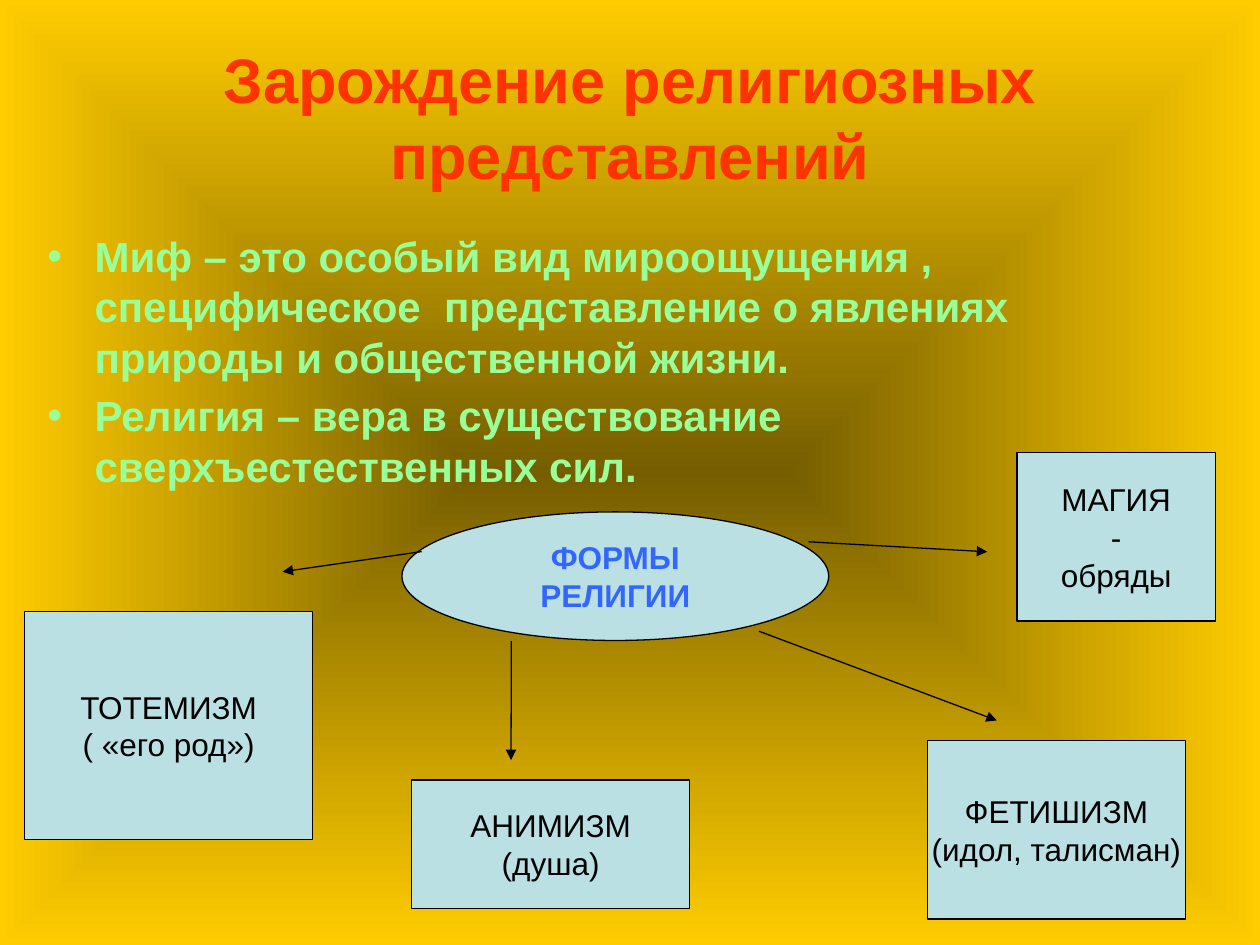
from dataclasses import dataclass

from pptx import Presentation
from pptx.dml.color import RGBColor
from pptx.enum.shapes import MSO_CONNECTOR, MSO_SHAPE
from pptx.enum.text import MSO_ANCHOR as Anchor, MSO_AUTO_SIZE as AutoSize, PP_ALIGN as Align
from pptx.oxml import parse_xml
from pptx.oxml.ns import nsdecls
from pptx.slide import Slide
from pptx.text.text import TextFrame
from pptx.util import Pt

COLORS = {
    "center": "765E00",
    "edge": "FFCC00",
    "title": "FF3300",
    "body": "99FF99",
    "node": "BBE0E3",
    "forms": "3366FF",
    "ink": "000000",
}


@dataclass
class Node:
    left: float
    top: float
    width: float
    height: float
    lines: list[str]
    preset: MSO_SHAPE = MSO_SHAPE.RECTANGLE
    color: str = "ink"
    bold: bool = False


@dataclass
class Arrow:
    x1: float
    y1: float
    x2: float
    y2: float


TITLE = ["Зарождение религиозных представлений"]
DEFINITIONS = [
    "Миф – это особый вид мироощущения , специфическое  представление о явлениях природы и общественной жизни.",
    "Религия – вера в существование сверхъестественных сил.",
]
NODES = [
    Node(229.7, 292.5, 243.9, 73.5, ["ФОРМЫ", "РЕЛИГИИ"], MSO_SHAPE.OVAL, "forms", True),
    Node(14.2, 349.3, 164.4, 130.4, ["ТОТЕМИЗМ", "( «его род»)"]),
    Node(235.3, 445.7, 158.7, 73.6, ["АНИМИЗМ", "(душа)"]),
    Node(530, 423.2, 147.4, 102, ["ФЕТИШИЗМ", "(идол, талисман)"]),
    Node(581.2, 258.5, 113.3, 96.5, ["МАГИЯ", "-", "обряды"]),
]
ARROWS = [
    Arrow(241, 315.2, 161.5, 326.7),
    Arrow(292.2, 366.3, 292, 434.4),
    Arrow(433.7, 360.7, 569.6, 411.7),
    Arrow(462, 309.6, 564.1, 315.3),
]


def rgb(name: str) -> RGBColor:
    return RGBColor.from_string(COLORS[name])


def write(frame: TextFrame, lines: list[str], size: float, color: str,
          bold: bool, align: Align) -> None:
    for index, line in enumerate(lines):
        paragraph = frame.paragraphs[0] if index == 0 else frame.add_paragraph()
        paragraph.alignment = align
        run = paragraph.add_run()
        run.text = line
        run.font.name = "Arial"
        run.font.size = Pt(size)
        run.font.bold = bold
        run.font.color.rgb = rgb(color)


def paint_background(slide: Slide) -> None:
    stops = "".join(
        f'<a:gs pos="{pos}"><a:srgbClr val="{COLORS[name]}"/></a:gs>'
        for pos, name in ((0, "center"), (100000, "edge"))
    )
    slide.element.cSld.insert(0, parse_xml(
        f'<p:bg {nsdecls("p", "a")}><p:bgPr><a:gradFill rotWithShape="0"><a:gsLst>{stops}</a:gsLst>'
        '<a:path path="shape"><a:fillToRect l="50000" t="50000" r="50000" b="50000"/></a:path>'
        '</a:gradFill><a:effectLst/></p:bgPr></p:bg>'
    ))


def fill_placeholder(slide: Slide, index: int, box: tuple[float, ...], lines: list[str],
                     size: float, color: str, align: Align) -> None:
    holder = slide.placeholders[index]
    holder.left, holder.top, holder.width, holder.height = map(Pt, box)
    holder.text_frame.auto_size = AutoSize.NONE
    write(holder.text_frame, lines, size, color, True, align)


def draw_node(slide: Slide, node: Node) -> None:
    shape = slide.shapes.add_shape(
        node.preset, Pt(node.left), Pt(node.top), Pt(node.width), Pt(node.height))
    shape.shadow.inherit = False
    shape.fill.solid()
    shape.fill.fore_color.rgb = rgb("node")
    shape.line.color.rgb = rgb("ink")
    shape.line.width = Pt(0.75)
    shape.text_frame.word_wrap = False
    shape.text_frame.vertical_anchor = Anchor.MIDDLE
    write(shape.text_frame, node.lines, 18, node.color, node.bold, Align.CENTER)


def draw_arrow(slide: Slide, arrow: Arrow) -> None:
    line = slide.shapes.add_connector(
        MSO_CONNECTOR.STRAIGHT, Pt(arrow.x1), Pt(arrow.y1), Pt(arrow.x2), Pt(arrow.y2))
    line.line.color.rgb = rgb("ink")
    line.line.width = Pt(0.75)
    line.line._get_or_add_ln().append(parse_xml(f'<a:tailEnd {nsdecls("a")} type="triangle"/>'))
    line._element.spPr.append(parse_xml(f'<a:effectLst {nsdecls("a")}/>'))


def main() -> None:
    deck = Presentation()
    deck.slide_width, deck.slide_height = Pt(720), Pt(540)
    slide = deck.slides.add_slide(deck.slide_layouts[1])
    paint_background(slide)
    fill_placeholder(slide, 0, (36, 21.6, 648, 90), TITLE, 36, "title", Align.CENTER)
    fill_placeholder(slide, 1, (19.8, 128, 664.2, 356.4), DEFINITIONS, 24, "body", Align.LEFT)
    for node in NODES:
        draw_node(slide, node)
    for arrow in ARROWS:
        draw_arrow(slide, arrow)
    deck.save("out.pptx")


if __name__ == "__main__":
    main()
